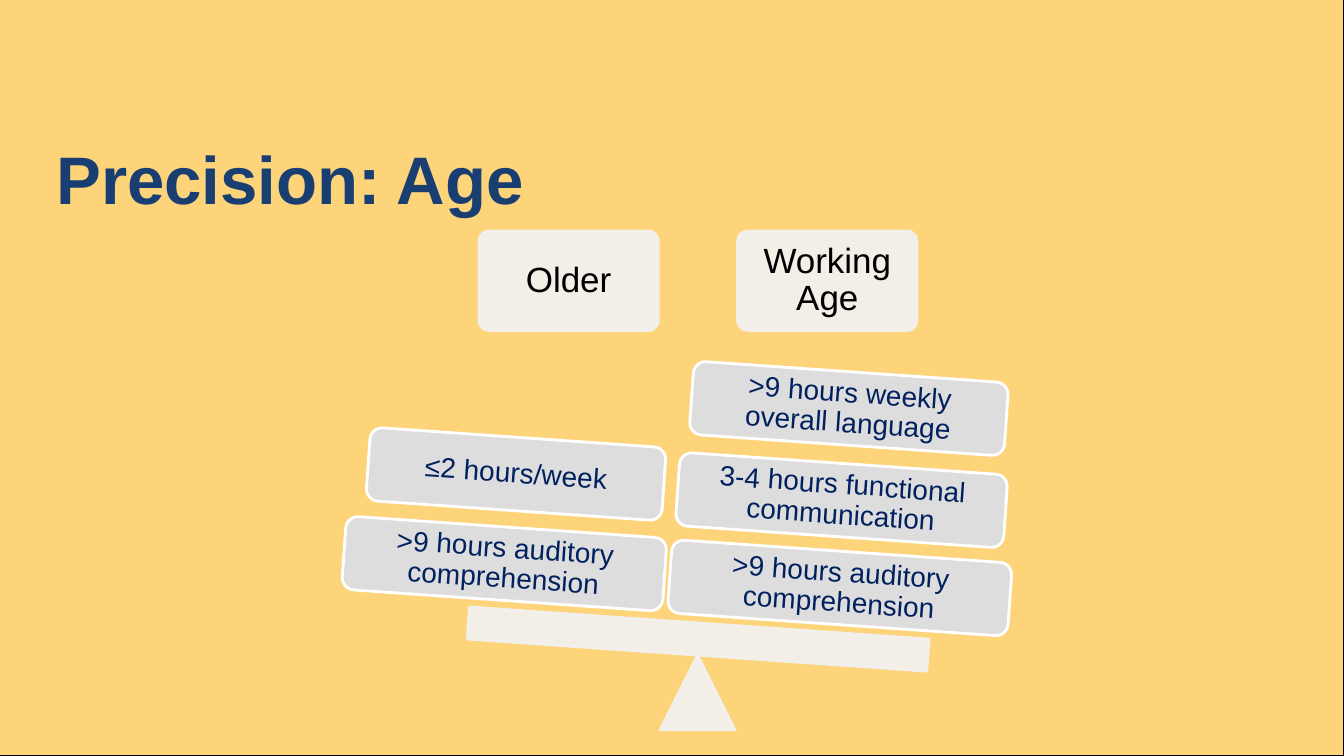
from lxml import etree
from pptx import Presentation
from pptx.dml.color import RGBColor
from pptx.enum.shapes import MSO_SHAPE
from pptx.enum.text import MSO_ANCHOR, MSO_AUTO_SIZE, PP_ALIGN
from pptx.oxml.ns import qn
from pptx.util import Cm, Pt

RECT = MSO_SHAPE.RECTANGLE
ROUNDED = MSO_SHAPE.ROUNDED_RECTANGLE
TRIANGLE = MSO_SHAPE.ISOSCELES_TRIANGLE
MIDDLE = MSO_ANCHOR.MIDDLE
LEFT, CENTER = PP_ALIGN.LEFT, PP_ALIGN.CENTER
NO_AUTOFIT = MSO_AUTO_SIZE.NONE

YELLOW = RGBColor(0xFE, 0xD4, 0x7A)
BLACK = RGBColor(0, 0, 0)
TITLE_BLUE = RGBColor(0x19, 0x3E, 0x72)
PALE = RGBColor(0xF2, 0xF2, 0xF2)
GREY = RGBColor(0xDD, 0xDD, 0xDD)
WHITE = RGBColor(0xFF, 0xFF, 0xFF)
NAVY = RGBColor(0x00, 0x20, 0x60)

FONT = "Arial"
WIDTH, HEIGHT = 33.87, 19.05
TILT = 4

# Left, top, width and text of each weight, in cm within the scale's box
WEIGHTS = [
    (8.21, 8.07, 8.28, "3-4 hours functional communication"),
    (8.41, 5.86, 8.28, "3-4 hours functional communication"),
]
WEIGHTS = [
    (8.41, 5.86, 8.28, "3-4 hours functional communication"),
    (8.21, 8.07, 8.59, ">9 hours auditory comprehension"),
    (8.76, 3.55, 7.95, ">9 hours weekly overall language"),
    (0, 7.46, 8.1, ">9 hours auditory comprehension"),
    (0.61, 5.2, 7.47, "≤2 hours/week"),
]
WEIGHTS_HEIGHT = 1.85
HEADERS = [(3.41, "Older"), (9.93, "Working Age")]


def add_box(s, kind, box, fill, line, line_width=2):
    sp = s.shapes.add_shape(kind, *(Cm(v) for v in box))
    sp.shadow.inherit = False
    sp.fill.solid()
    sp.fill.fore_color.rgb = fill
    sp.line.color.rgb = line
    sp.line.width = Pt(line_width)
    return sp


def add_pale_box(s, kind, box):
    sp = add_box(s, kind, box, PALE, PALE)
    # Fill and outline at 90% opacity
    for color in sp.element.spPr.iter(qn("a:srgbClr")):
        etree.SubElement(color, qn("a:alpha")).set("val", "90000")
    return sp


def set_text(sp, text, size, color, margin):
    tf = sp.text_frame
    tf.word_wrap = True
    tf.vertical_anchor = MIDDLE
    tf.margin_left = tf.margin_right = Cm(margin)
    tf.margin_top = tf.margin_bottom = Cm(margin)
    p = tf.paragraphs[0]
    p.text = text
    p.alignment = CENTER
    p.line_spacing = 0.9
    p.font.name = FONT
    p.font.size = Pt(size)
    p.font.color.rgb = color


def add_background(s, left, top, width, height):
    sp = add_box(s, RECT, (left, top, width, height), YELLOW, BLACK, 0.75)
    # Send behind the title
    sp.element.getparent().insert(2, sp.element)


def add_title(s, left, top, width, height):
    title = s.shapes.title
    title.left, title.top = Cm(left), Cm(top)
    title.width, title.height = Cm(width), Cm(height)
    set_text(title, "Precision: Age", 48, TITLE_BLUE, 0.13)
    tf = title.text_frame
    tf.auto_size = NO_AUTOFIT
    tf.margin_left = tf.margin_right = Cm(0.25)
    p = tf.paragraphs[0]
    p.alignment = LEFT
    p.font.bold = True


def add_scale(s, left, top):
    # Group headers
    for x, text in HEADERS:
        header = add_pale_box(s, ROUNDED, (left + x, top, 4.52, 2.51))
        header.adjustments[0] = 0.1
        set_text(header, text, 25, BLACK, 0.25)

    # Fulcrum and tilted beam
    add_pale_box(s, TRIANGLE, (left + 7.98, top + 10.69, 1.88, 1.88))
    beam = add_pale_box(s, RECT, (left + 3.13, top + 9.88, 11.61, 0.81))
    beam.rotation = TILT

    # Weights on both sides
    for x, y, width, text in WEIGHTS:
        weight = add_box(s, ROUNDED, (left + x, top + y, width, WEIGHTS_HEIGHT),
                         GREY, WHITE)
        weight.rotation = TILT
        set_text(weight, text, 20, NAVY, 0.2)


def main():
    prs = Presentation()
    prs.slide_width, prs.slide_height = Cm(WIDTH), Cm(HEIGHT)
    s = prs.slides.add_slide(prs.slide_layouts[5])
    add_background(s, 0, 0, WIDTH, HEIGHT)
    add_title(s, 1.17, 2.77, 25.45, 3.68)
    add_scale(s, 8.66, 5.82)
    prs.save("out.pptx")


if __name__ == "__main__":
    main()
